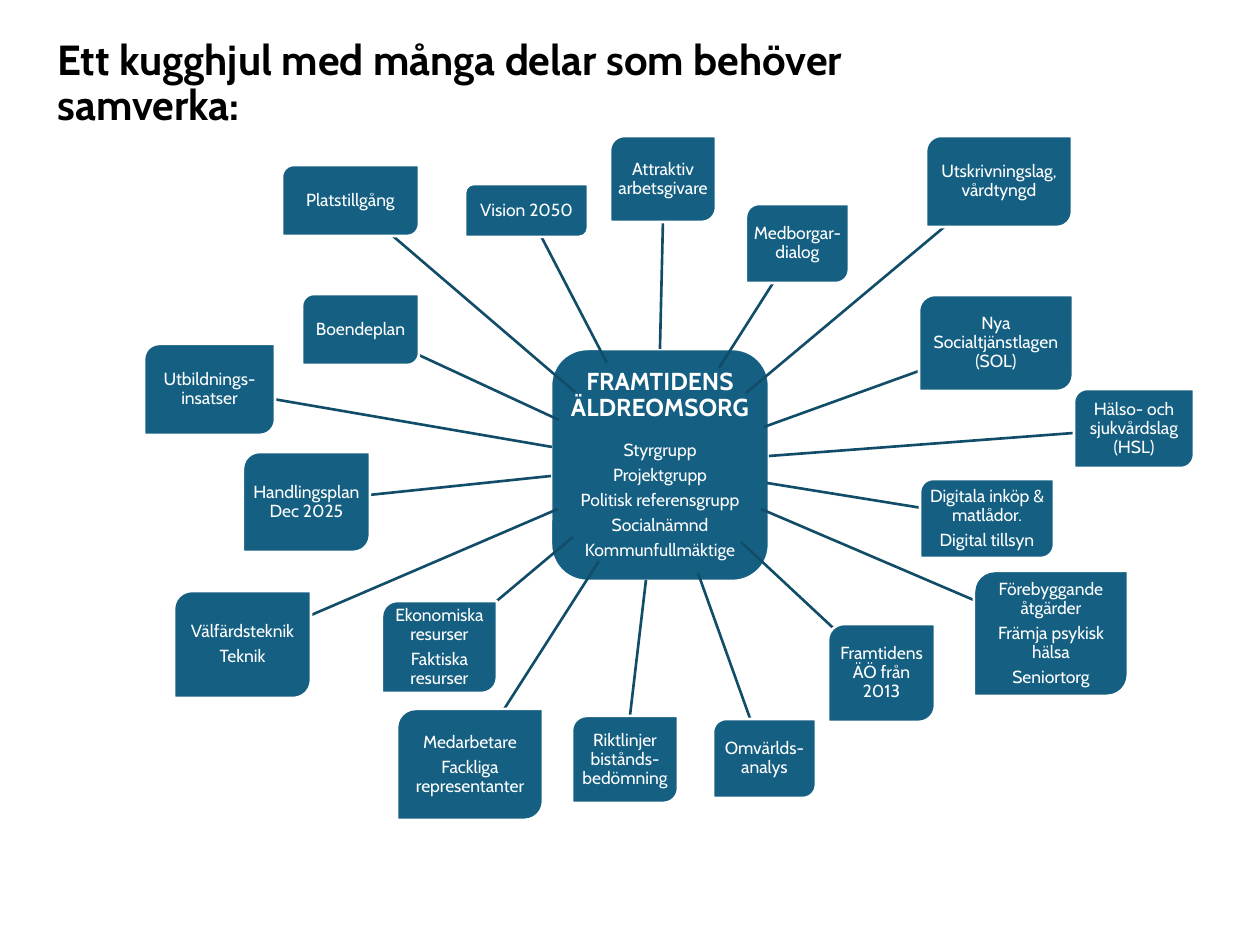
import pptx
import pptx.dml.color
import pptx.enum.shapes
import pptx.enum.text
import pptx.oxml.ns
import pptx.util
from lxml import etree

PX = 914400 // 126
BLUE = pptx.dml.color.RGBColor(0x15, 0x60, 0x82)
DARK_BLUE = pptx.dml.color.RGBColor(0x11, 0x4D, 0x68)
WHITE = pptx.dml.color.RGBColor(0xFF, 0xFF, 0xFF)
BLACK = pptx.dml.color.RGBColor(0, 0, 0)

SHAPE = pptx.enum.shapes.MSO_SHAPE
TOP, BOTTOM = 0, 2
LINE_WIDTH = pptx.util.Pt(1.5)
INSET = pptx.util.Inches(0.01)
LABEL_FRAME = {
    "word_wrap": True,
    "vertical_anchor": pptx.enum.text.MSO_ANCHOR.MIDDLE,
    "margin_left": INSET,
    "margin_top": INSET,
    "margin_right": INSET,
    "margin_bottom": INSET,
}
TITLE_FRAME = {
    "word_wrap": True,
    "auto_size": pptx.enum.text.MSO_AUTO_SIZE.NONE,
    "vertical_anchor": pptx.enum.text.MSO_ANCHOR.BOTTOM,
}
LABEL_PARAGRAPH = {
    "alignment": pptx.enum.text.PP_ALIGN.CENTER,
    "line_spacing": 0.9,
    "space_after": pptx.util.Pt(3.5),
}
HEADING_PARAGRAPH = LABEL_PARAGRAPH | {"space_after": pptx.util.Pt(11)}
TITLE_PARAGRAPH = {"alignment": pptx.enum.text.PP_ALIGN.LEFT, "line_spacing": 0.9}
LABEL_FONT = {"name": "Cabin", "size": pptx.util.Pt(10), "bold": False}
HEADING_FONT = {"name": "Cabin", "size": pptx.util.Pt(14), "bold": True}
TITLE_FONT = {"name": "Cabin", "size": pptx.util.Pt(24), "bold": True}

TITLE = "Ett kugghjul med många delar som behöver samverka:"
HUB_BOX = (551, 349, 218, 232)
HUB_TEXTS = [
    "FRAMTIDENS ÄLDREOMSORG", "Styrgrupp", "Projektgrupp",
    "Politisk referensgrupp", "Socialnämnd", "Kommunfullmäktige",
]
VERTICAL_PART = ((661, 349, 663, 221), (610, 136, 106, 86), ["Attraktiv arbetsgivare"])
PARTS = [
    ((719, 368, 775, 280), (746, 204, 103, 79), ["Medborgar-dialog"]),
    ((746, 393, 955, 218), (926, 136, 146, 91), ["Utskrivningslag, vårdtyngd"]),
    ((764, 427, 930, 367), (919, 295, 154, 96), ["Nya Socialtjänstlagen (SOL)"]),
    ((769, 456, 1074, 433), (1074, 389, 120, 79), ["Hälso- och sjukvårdslag (HSL)"]),
    ((767, 483, 922, 508), (920, 479, 134, 79),
     ["Digitala inköp & matlådor.", "Digital tillsyn"]),
    ((761, 509, 983, 604), (974, 571, 154, 125),
     ["Förebyggande åtgärder", "Främja psykisk hälsa", "Seniortorg"]),
    ((741, 542, 844, 638), (828, 624, 107, 98), ["Framtidens ÄÖ från 2013"]),
    ((698, 573, 751, 721), (713, 719, 103, 79), ["Omvärlds-analys"]),
    ((646, 580, 630, 716), (572, 716, 106, 87), ["Riktlinjer bistånds-bedömning"]),
    ((599, 561, 501, 714), (397, 709, 146, 111),
     ["Medarbetare", "Fackliga representanter"]),
    ((573, 537, 480, 615), (382, 601, 115, 92),
     ["Ekonomiska resurser", "Faktiska resurser"]),
    ((558, 509, 302, 619), (174, 591, 137, 107), ["Välfärdsteknik", "Teknik"]),
    ((551, 476, 369, 495), (243, 452, 127, 100), ["Handlingsplan Dec 2025"]),
    ((552, 447, 273, 399), (144, 344, 131, 91), ["Utbildnings-insatser"]),
    ((559, 420, 408, 350), (302, 294, 117, 71), ["Boendeplan"]),
    ((575, 392, 387, 231), (282, 165, 137, 71), ["Platstillgång"]),
    ((607, 363, 541, 236), (465, 184, 123, 53), ["Vision 2050"]),
]


def px(lengths):
    """Turn pixel lengths into EMU."""
    return [length * PX for length in lengths]


def apply(target, values):
    """Set every attribute named in values on the target."""
    for name, value in values.items():
        setattr(target, name, value)


def write(paragraph, text, layout, font, color):
    """Fill a paragraph with formatted text."""
    apply(paragraph, layout)
    run = paragraph.add_run()
    run.text = text
    apply(run.font, font)
    run.font.color.rgb = color


def add_title(slide):
    """Place and format the slide title."""
    title = slide.shapes.title
    apply(title, dict(zip(("left", "top", "width", "height"), px((45, 15, 872, 121)))))
    apply(title.text_frame, TITLE_FRAME)
    write(title.text_frame.paragraphs[0], TITLE, TITLE_PARAGRAPH, TITLE_FONT, BLACK)


def add_box(slide, kind, box, texts, has_heading=False):
    """Add a blue rounded box with one paragraph per text."""
    part = slide.shapes.add_shape(kind, *px(box))
    part.shadow.inherit = False
    part.fill.solid()
    part.fill.fore_color.rgb = BLUE
    part.line.color.rgb = WHITE
    part.line.width = LINE_WIDTH
    frame = part.text_frame
    apply(frame, LABEL_FRAME)
    for index, text in enumerate(texts):
        paragraph = frame.add_paragraph() if index else frame.paragraphs[0]
        if has_heading and index == 0:
            write(paragraph, text, HEADING_PARAGRAPH, HEADING_FONT, WHITE)
        else:
            write(paragraph, text, LABEL_PARAGRAPH, LABEL_FONT, WHITE)
    return part


def add_spoke(slide, ends):
    """Add a straight line between two points."""
    spoke = slide.shapes.add_connector(
        pptx.enum.shapes.MSO_CONNECTOR.STRAIGHT, *px(ends))
    spoke.line.color.rgb = DARK_BLUE
    spoke.line.width = LINE_WIDTH
    etree.SubElement(spoke._element.spPr, pptx.oxml.ns.qn("a:effectLst"))
    return spoke


def add_part(slide, ends, box, texts):
    """Add a spoke with its box in front of it."""
    spoke = add_spoke(slide, ends)
    return spoke, add_box(slide, SHAPE.ROUND_2_DIAG_RECTANGLE, box, texts)


def main():
    """Build the hub and its surrounding parts."""
    deck = pptx.Presentation()
    deck.slide_width = pptx.util.Inches(10)
    deck.slide_height = pptx.util.Inches(7.5)
    slide = deck.slides.add_slide(deck.slide_layouts[5])
    add_title(slide)
    hub = add_box(slide, SHAPE.ROUNDED_RECTANGLE, HUB_BOX, HUB_TEXTS, True)
    spoke, employer = add_part(slide, *VERTICAL_PART)
    spoke.begin_connect(hub, TOP)
    spoke.end_connect(employer, BOTTOM)
    for ends, box, texts in PARTS:
        add_part(slide, ends, box, texts)
    deck.save("out.pptx")


if __name__ == "__main__":
    main()
